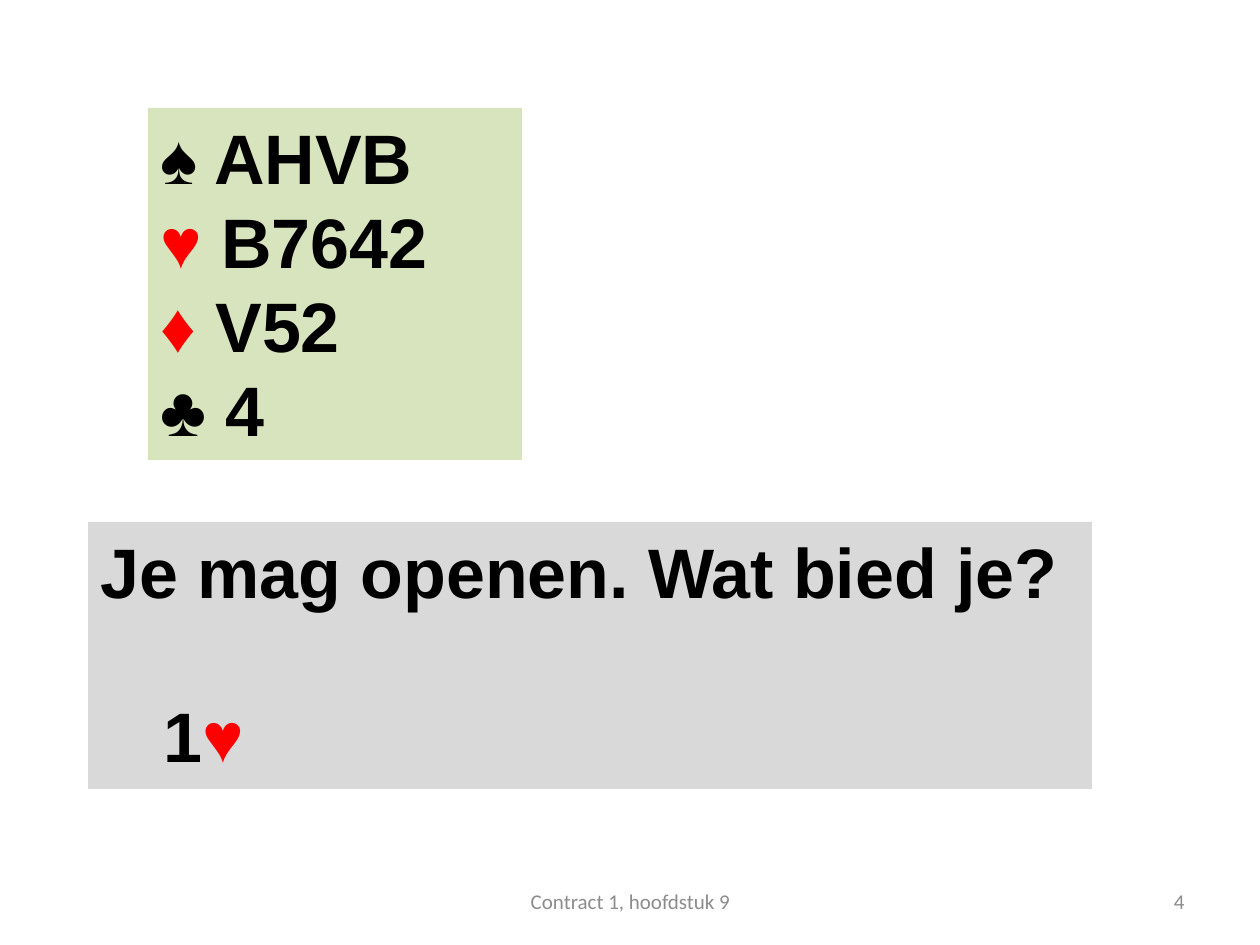
"""Build a bridge bidding quiz slide with a hand, a question and a footer."""
import dataclasses

import pptx
import pptx.dml.color
import pptx.enum.text
import pptx.util

ALIGN = pptx.enum.text.PP_ALIGN
ANCHOR = pptx.enum.text.MSO_ANCHOR
FIT = pptx.enum.text.MSO_AUTO_SIZE


@dataclasses.dataclass(frozen=True)
class Theme:
    ink: str = "000000"
    red: str = "FF0000"
    muted: str = "8C8C8C"
    hand: str = "D7E4BD"
    question: str = "D9D9D9"
    card_size: int = 40
    footer_size: int = 12
    answer_gap: int = 46


class SlideBuilder:
    SCALE = 914400 / 126

    def __init__(self, deck, theme):
        self.theme = theme
        self.page = deck.slides.add_slide(deck.slide_layouts[6])

    def frame(self, bounds, **formats):
        lengths = [round(value * self.SCALE) for value in bounds]
        box = self.page.shapes.add_textbox(*lengths)
        for name, value in {"word_wrap": True, **formats}.items():
            setattr(box.text_frame, name, value)
        return box

    def add_span(self, para, text, color, **formats):
        span = para.add_run()
        span.text = text
        for name, value in formats.items():
            setattr(span.font, name, value)
        span.font.color.rgb = pptx.dml.color.RGBColor.from_string(color)

    def panel(self, bounds, fill, lines, gap=0):
        box = self.frame(bounds, auto_size=FIT.SHAPE_TO_FIT_TEXT)
        box.fill.solid()
        box.fill.fore_color.rgb = pptx.dml.color.RGBColor.from_string(fill)
        for index, spans in enumerate(lines):
            frame = box.text_frame
            para = frame.add_paragraph() if index else frame.paragraphs[0]
            if index and gap:
                para.space_before = pptx.util.Pt(gap)
            for text, color in spans:
                self.add_span(para, text, color, name="Arial", bold=True,
                              size=pptx.util.Pt(self.theme.card_size))

    def footer(self, bounds, text, align):
        box = self.frame(bounds, vertical_anchor=ANCHOR.MIDDLE)
        para = box.text_frame.paragraphs[0]
        para.alignment = align
        self.add_span(para, text, self.theme.muted, name="Calibri",
                      size=pptx.util.Pt(self.theme.footer_size))


def main():
    deck = pptx.Presentation()
    deck.slide_width = pptx.util.Inches(10)
    deck.slide_height = pptx.util.Inches(7.5)
    theme = Theme()
    slide = SlideBuilder(deck, theme)

    suits = [("♠", theme.ink, "AHVB"), ("♥", theme.red, "B7642"),
             ("♦", theme.red, "V52"), ("♣", theme.ink, "4")]
    hand = [[(suit, color), (f" {cards}", theme.ink)]
            for suit, color, cards in suits]
    slide.panel((148, 108, 374, 352), theme.hand, hand)

    question = [[("Je mag openen. Wat bied je?", theme.ink)],
                [("\t1", theme.ink), ("♥", theme.red)]]
    slide.panel((88, 522, 1004, 267), theme.question, question,
                gap=theme.answer_gap)

    slide.footer((903, 876, 294, 50), "4", ALIGN.RIGHT)
    slide.footer((431, 876, 399, 50), "Contract 1, hoofdstuk 9", ALIGN.CENTER)
    deck.save("out.pptx")


if __name__ == "__main__":
    main()
